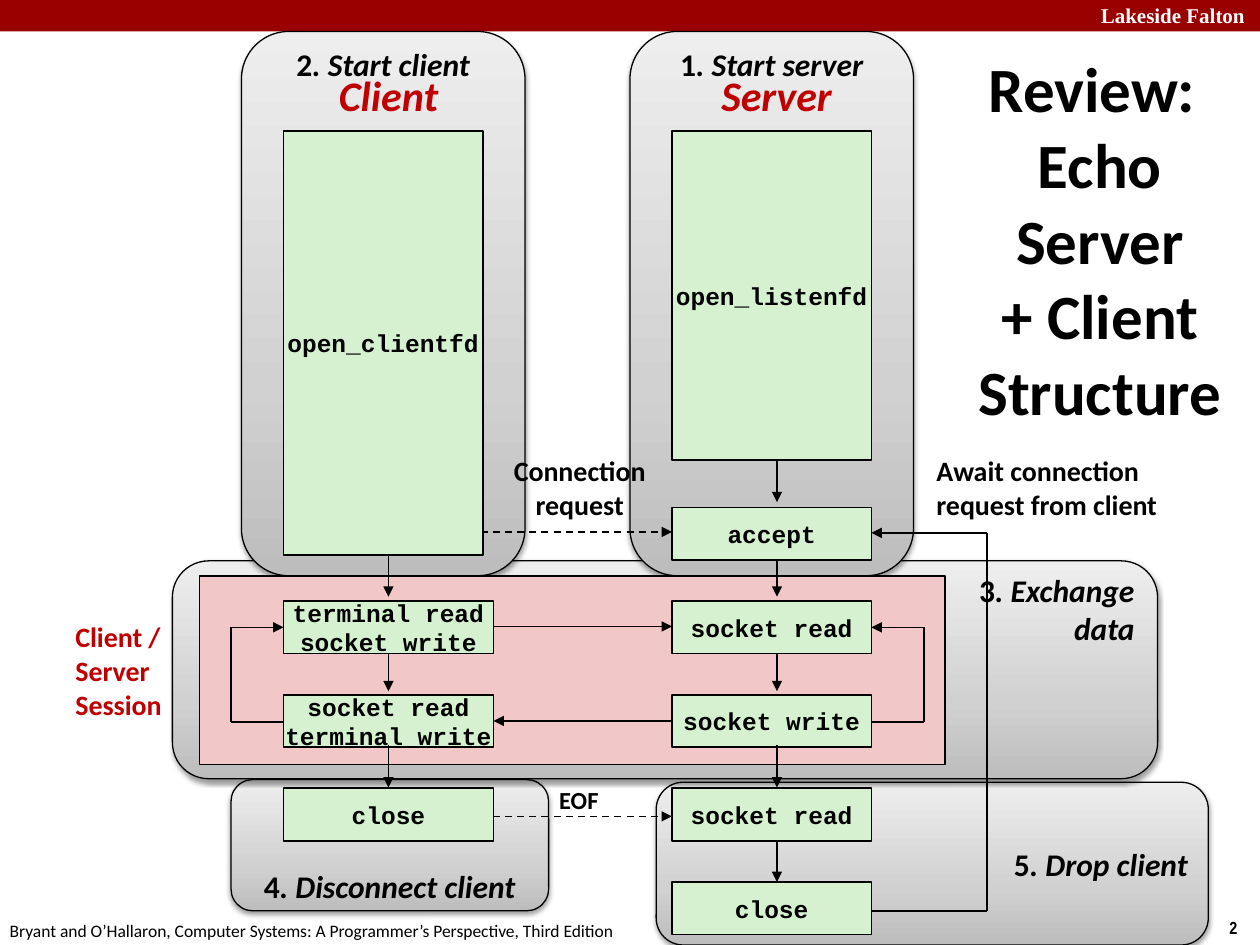
from lxml.etree import SubElement
from pptx import Presentation
from pptx.dml.color import RGBColor
from pptx.enum.dml import MSO_LINE
from pptx.enum.shapes import MSO_CONNECTOR, MSO_SHAPE
from pptx.enum.text import MSO_ANCHOR, PP_ALIGN
from pptx.oxml import parse_xml
from pptx.oxml.ns import nsdecls, qn
from pptx.util import Pt

BLACK = RGBColor(0, 0, 0)
WHITE = RGBColor(255, 255, 255)
CRIMSON = RGBColor(0x99, 0, 0)
RED = RGBColor(0xC0, 0, 0)
PINK = RGBColor(0xF1, 0xC7, 0xC7)
GREEN = RGBColor(0xD5, 0xF1, 0xCF)
LEFT, MID, RIGHT = PP_ALIGN.LEFT, PP_ALIGN.CENTER, PP_ALIGN.RIGHT
TOP, MIDDLE, BOTTOM = MSO_ANCHOR.TOP, MSO_ANCHOR.MIDDLE, MSO_ANCHOR.BOTTOM

GRADIENT = f"""<a:gradFill {nsdecls('a')} rotWithShape="1"><a:gsLst>
<a:gs pos="0"><a:srgbClr val="BDBDBD"/></a:gs>
<a:gs pos="35000"><a:srgbClr val="D1D1D1"/></a:gs>
<a:gs pos="100000"><a:srgbClr val="EEEEEE"/></a:gs>
</a:gsLst><a:lin ang="16200000" scaled="1"/></a:gradFill>"""
SHADOW = f"""<a:outerShdw {nsdecls('a')} blurRad="{Pt(3.1)}" dist="{Pt(1.6)}"
dir="5400000" rotWithShape="0"><a:srgbClr val="000000">
<a:alpha val="38000"/></a:srgbClr></a:outerShdw>"""


class Board:
    """Holds the style and the current slide; lengths are points."""
    sans, mono = "Calibri", "Courier New"

    def __init__(self, slide):
        self.shapes = slide.shapes

    def font(self, part, size, color=BLACK, name=sans, bold=True, italic=None):
        font = part.font
        font.size, font.name, font.bold, font.italic = Pt(size), name, bold, italic
        font.color.rgb = color

    def fill(self, frame, text, align, **style):
        frame.text = text
        for par in frame.paragraphs:
            par.alignment = align
            self.font(par, **style)

    def text(self, x, y, w, h, text, size, align=LEFT, anchor=MIDDLE, wrap=False, **style):
        frame = self.shapes.add_textbox(Pt(x), Pt(y), Pt(w), Pt(h)).text_frame
        frame.word_wrap, frame.vertical_anchor = wrap, anchor
        self.fill(frame, text, align, size=size, **style)
        return frame

    def rect(self, x, y, w, h, color, edge=True):
        shape = self.shapes.add_shape(MSO_SHAPE.RECTANGLE, Pt(x), Pt(y), Pt(w), Pt(h))
        shape.shadow.inherit = False
        shape.fill.solid()
        shape.fill.fore_color.rgb = color
        if edge:
            shape.line.color.rgb, shape.line.width = BLACK, Pt(1)
        else:
            shape.line.fill.background()
        return shape

    def box(self, x, y, w, text, h=30):
        frame = self.rect(x, y, w, h, GREEN).text_frame
        frame.word_wrap, frame.vertical_anchor = False, MIDDLE
        self.fill(frame, text, MID, size=14, name=self.mono)

    def panel(self, x, y, w, h, step, text, align=MID, anchor=TOP):
        shape = self.shapes.add_shape(
            MSO_SHAPE.ROUNDED_RECTANGLE, Pt(x), Pt(y), Pt(w), Pt(h))
        shape.line.color.rgb, shape.line.width = BLACK, Pt(0.75)
        shape.shadow.inherit = False
        props = shape.element.spPr
        props.find(qn("a:prstGeom")).addnext(parse_xml(GRADIENT))
        props.find(qn("a:effectLst")).append(parse_xml(SHADOW))
        frame = shape.text_frame
        frame.vertical_anchor, frame.margin_top = anchor, 0
        frame.margin_bottom = Pt(3.6 if anchor == TOP else 0)
        self.fill(frame, text, align, size=18, italic=True)
        first = frame.paragraphs[0]
        tail = first.runs[0].text
        first.runs[0].text = step
        self.font(first.runs[0], 18, italic=False)
        first.add_run().text = tail

    def path_line(self, *points, dash=False):
        """Joins the points with straight lines and an arrowhead at the end."""
        for start, end in zip(points, points[1:]):
            line = self.shapes.add_connector(
                MSO_CONNECTOR.STRAIGHT, *map(Pt, start + end))
            line.line.color.rgb, line.line.width = BLACK, Pt(1)
            if dash:
                line.line.dash_style = MSO_LINE.DASH
            if end == points[-1]:
                SubElement(line.line._get_or_add_ln(), qn("a:tailEnd"), type="triangle")
            SubElement(line.element.spPr, qn("a:effectLst"))


def main():
    deck = Presentation()
    deck.slide_width, deck.slide_height = Pt(720), Pt(540)
    board = Board(deck.slides.add_slide(deck.slide_layouts[6]))

    # Banner and footer
    board.rect(0, 0, 720, 18, CRIMSON, edge=False)
    board.text(622, -2, 103, 21.5, "Lakeside Falton", 12, anchor=TOP, wrap=True,
               color=WHITE, name="Times New Roman")
    board.text(695.5, 520.5, 24.5, 19.5, "2", 10, anchor=TOP, name="Arial Narrow")
    board.text(-1.5, 522, 366, 19.5, "Bryant and O’Hallaron, Computer Systems: "
               "A Programmer’s Perspective, Third Edition", 10, anchor=TOP, bold=False)

    # Step panels
    board.panel(375, 447, 315.5, 93, "5", ". Drop client", RIGHT, MIDDLE)
    board.panel(132, 445.5, 181.5, 75, "4", ". Disconnect client", anchor=BOTTOM)
    board.panel(98.5, 320.5, 563, 124.5, "3", ". Exchange\ndata", RIGHT)
    board.panel(138, 18, 162, 311, "2", ". Start client")
    board.panel(360, 18, 162, 311, "1", ". Start server")

    # Grid: two columns, five rows
    client, server, wide, slim = 162, 384, 120, 114
    rows = [290 + 53.5 * i for i in range(5)]
    down, up = 222, 444
    read, write = 358.5, 412.5

    # Session area with its two loops
    board.rect(114, 329, 426, 108, PINK)
    for edge, turn in ((server + slim, 528), (client, 132)):
        board.path_line((edge, write), (turn, write), (turn, read), (edge, read))
    board.text(36, 350.5, 66, 65, "Client / Server\nSession", 16, wrap=True, color=RED)

    # Title and column heads
    title = board.text(540, 89.5, 168, 94, "Review: Echo\vServer\v+ Client\vStructure",
                       36, MID, wrap=True)
    indent = title.paragraphs[0]._p.get_or_add_pPr()
    indent.set("marL", str(Pt(9)))
    indent.set("indent", str(Pt(-9)))
    board.text(186, 36, 72, 36, "Client", 24, MID, color=RED, italic=True)
    board.text(404.5, 36, 78.5, 36, "Server", 24, MID, color=RED, italic=True)

    # Arrows down the columns
    for x, tops in ((down, (317, 371)), (up, (263, 317, 371, 480))):
        for top in tops:
            board.path_line((x, top), (x, top + 24))

    # Arrows between the columns
    for y in (304, 466.5):
        board.path_line((240, y), (server, y), dash=True)
    board.path_line((client + wide, 358), (server, 358))
    board.path_line((server, 412), (client + wide, 412))
    board.path_line((server + slim, 520.5), (564, 520.5), (564, 304.5),
                    (server + slim, 304.5))

    # Call boxes
    calls = ("accept", "socket read", "socket write", "socket read", "close")
    for y, call in zip(rows, calls):
        board.box(server, y, slim, call)
    calls = ("terminal read\nsocket write", "socket read\nterminal write", "close")
    for y, call in zip(rows[1:], calls):
        board.box(client, y, wide, call)
    board.box(server, 75, slim, "open_listenfd", 188)
    board.box(client, 75, slim, "open_clientfd", 242)
    for x in (down, up):
        board.path_line((x, 426), (x, 450))

    # Arrow labels
    board.text(286, 255.5, 90.5, 46, "Connection\nrequest", 16, MID)
    board.text(312, 445, 37.5, 24.5, "EOF", 14, MID)
    board.text(528, 255.5, 144, 46, "Await connection\nrequest from client", 16)

    deck.save("out.pptx")


if __name__ == "__main__":
    main()
